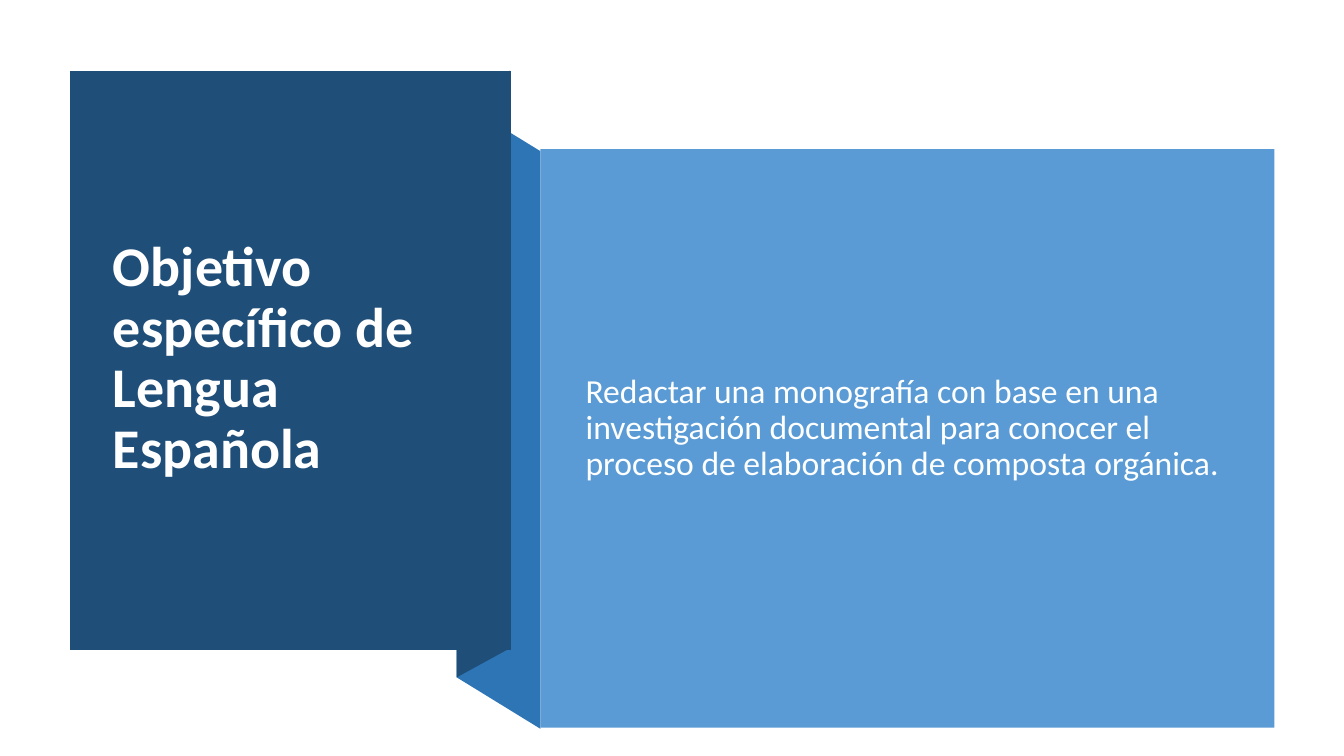
from pptx import Presentation
from pptx import util as u
from pptx.dml import color
from pptx.enum import shapes, text

NAVY, BLUE, SKY = "1F4E79", "2E75B6", "5B9BD5"
TITLE = "Objetivo específico de Lengua Española"
OBJECTIVE = ("Redactar una monografía con base en una investigación documental "
             "para conocer el proceso de elaboración de composta orgánica.")


def rgb(value):
    return color.RGBColor.from_string(value)


def paint(shape, fill):
    shape.fill.solid()
    shape.fill.fore_color.rgb = rgb(fill)
    shape.line.fill.background()
    shape.shadow.inherit = False


def add_polygon(slide, points, fill):
    corners = [(u.Inches(x), u.Inches(y)) for x, y in points]
    builder = slide.shapes.build_freeform(*corners[0])
    builder.add_line_segments(corners[1:], close=True)
    paint(builder.convert_to_shape(), fill)


def place(shape, left, top, width, height):
    box = dict(left=left, top=top, width=width, height=height)
    for name, value in box.items():
        setattr(shape, name, u.Inches(value))


def write(shape, words, space_before, **font_values):
    frame = shape.text_frame
    frame.text = words
    frame_values = dict(word_wrap=True, auto_size=text.MSO_AUTO_SIZE.NONE,
                        vertical_anchor=text.MSO_ANCHOR.MIDDLE)
    for name, value in frame_values.items():
        setattr(frame, name, value)
    paragraph = frame.paragraphs[0]
    paragraph_values = dict(alignment=text.PP_ALIGN.LEFT, line_spacing=0.9,
                            space_before=u.Pt(space_before))
    for name, value in paragraph_values.items():
        setattr(paragraph, name, value)
    font = paragraph.runs[0].font
    font.color.rgb = rgb(font_values.pop("color"))
    for name, value in dict(name="Calibri", **font_values).items():
        setattr(font, name, value)


def add_ribbon_fold(slide, left, top, width, height):
    """Folded strip joining the title panel to the objective panel."""
    right, bottom = left + width, top + height
    crease, slant, tuck = left + 0.53, 0.51, 0.29
    # Strip running behind, towards the objective panel
    add_polygon(slide, [(right, bottom), (left, bottom - slant),
                        (left, top), (right, top + slant)], BLUE)
    # Underside of the title panel
    add_polygon(slide, [(crease, bottom - slant - tuck), (left, bottom - slant),
                        (left, top), (crease, top - tuck)], NAVY)


def add_title_panel(slide, left, top, width, height):
    right, bottom = left + width, top + height
    add_polygon(slide, [(left, top), (right, top), (right, bottom), (left, bottom)], NAVY)
    title = slide.shapes.title
    place(title, left + 0.33, top + 0.37, width - 0.66, height - 0.76)
    write(title, TITLE, 0, size=u.Pt(40), bold=True, color="FFFFFF")
    # Bring the title in front of its panel
    title.element.getparent().append(title.element)


def add_objective_panel(slide, left, top, width, height):
    box = [u.Inches(value) for value in (left, top, width, height)]
    paint(slide.shapes.add_shape(shapes.MSO_SHAPE.RECTANGLE, *box), SKY)
    objective = slide.shapes.add_textbox(*box)
    place(objective, left + 0.35, top + 0.4, width - 0.77, height - 1)
    write(objective, OBJECTIVE, 10, size=u.Pt(24), color="FEFFFF")


def main():
    presentation = Presentation()
    presentation.slide_width = u.Inches(13.33)
    presentation.slide_height = u.Inches(7.5)
    slide = presentation.slides.add_slide(presentation.slide_layouts[5])
    add_ribbon_fold(slide, 4.53, 0.99, 0.83, 6.24)
    add_title_panel(slide, 0.69, 0.7, 4.38, 5.75)
    add_objective_panel(slide, 5.36, 1.48, 7.28, 5.74)
    presentation.save("out.pptx")


if __name__ == "__main__":
    main()
